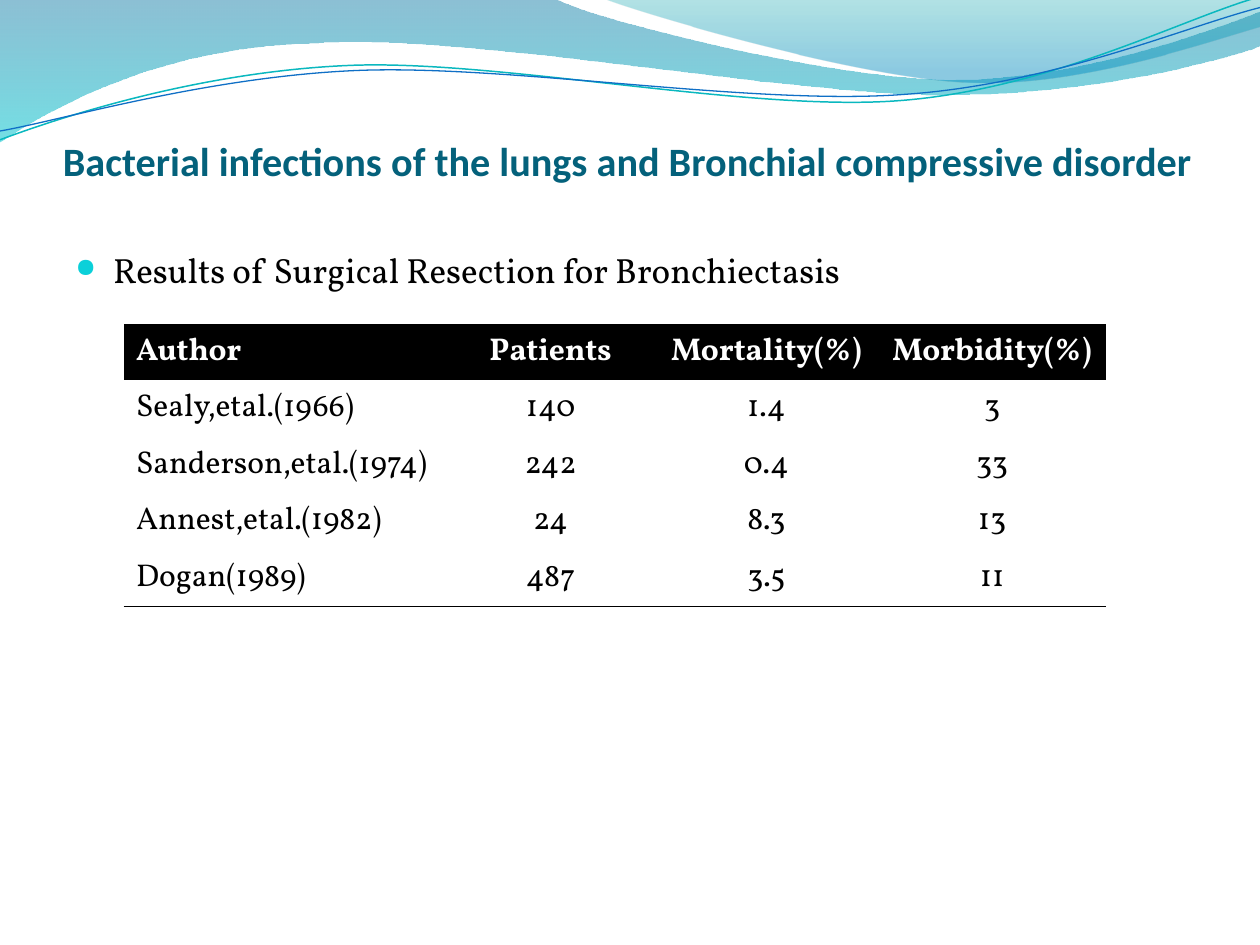
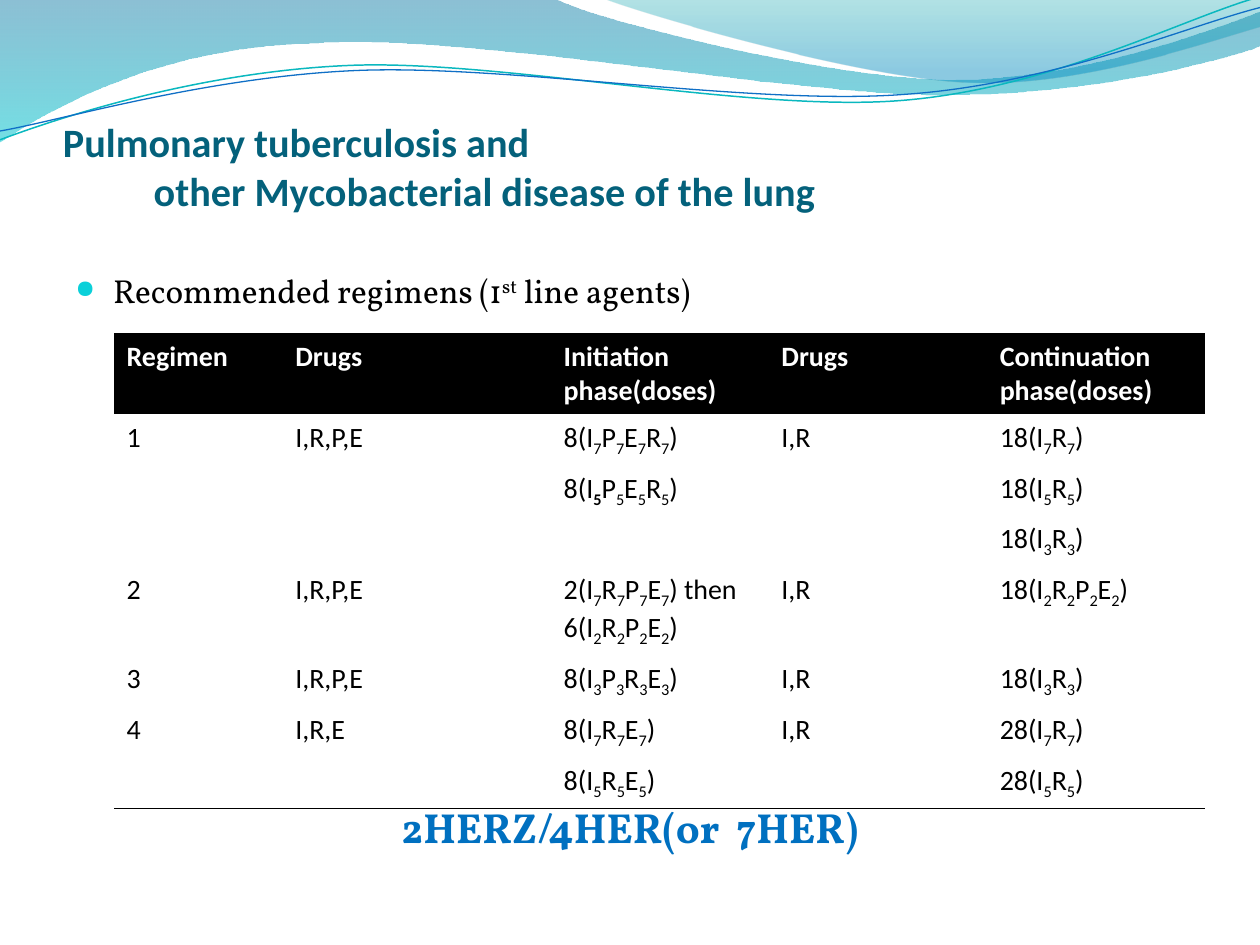
from lxml import etree
from pptx import Presentation, util as u
from pptx.dml.color import RGBColor
from pptx.enum import text
from pptx.oxml.ns import qn

COLORS = {
    "title": "04617B", "body": "000000", "header_text": "FFFFFF", "bullet": "0BD0D9",
    "regimen": "0070C0", "wave_blue": "0074A1", "wave_cyan": "00C6CF",
    "crest_teal": "00A1A9", "crest_blue": "008BBF",
    "line_teal": "0AB8BF", "line_blue": "0F6FC6",
}
HEADING, BODY = "Calibri", "Vollkorn"
NO_STYLE = "{2D5ABB26-0587-4C30-8999-92F81FD0307C}"
CM_PER_INCH = 2.54

# Outlines in inches: a start point, then lines (2 numbers) or Bezier curves (6 numbers).
# Gradient stops are (colour, position, opacity in percent).
BANDS = [
    ([(0, 0), (4.4, -0.01), (4.76, 0.17, 6.64, 0.63, 7.58, 0.63),
      (8.53, 0.63, 9.58, 0.26, 10, 0.09), (10.01, 0.36),
      (9.83, 0.44, 8.7, 0.76, 7.46, 0.75), (6.22, 0.75, 3.82, 0.28, 2.57, 0.34),
      (1.29, 0.36, 0.46, 0.83, -0.01, 1.13), (0, 0)],
     [("wave_blue", 0, 45), ("wave_cyan", 1, 55)]),
    ([(4.79, -0.01), (5.09, 0.11, 6.82, 0.62, 7.69, 0.65),
      (8.56, 0.69, 9.61, 0.32, 10, 0.21), (10, 0), (4.79, -0.01)],
     [("crest_teal", 0, 30), ("crest_blue", 0.8, 45)]),
]
RIPPLES = [
    ([(0, 1.11), (0.48, 0.93, 1.58, 0.57, 2.77, 0.52),
      (3.95, 0.47, 5.93, 0.89, 7.13, 0.8), (8.33, 0.71, 9.38, 0.15, 9.98, -0.02)],
     "line_teal", 0.85),
    ([(0, 1.04), (0.47, 0.96, 1.64, 0.61, 2.83, 0.56),
      (4.03, 0.51, 5.97, 0.84, 7.17, 0.75), (8.36, 0.67, 9.41, 0.21, 10, 0.06)],
     "line_blue", 0.75),
]

# Text between tildes is raised or lowered.
SLIDES = [
    {
        "title": "Bacterial infections of the lungs and Bronchial compressive disorder",
        "title_height": 1.77, "title_hanging": 0,
        "point": "Results of Surgical Resection for Bronchiectasis",
        "point_top": 4.72, "point_height": 11.61, "point_size": 20, "point_spacing": 1.2,
        "table_at": (2.49, 6.53), "table_font": BODY, "table_size": 18,
        "columns": [6.51, 4.2, 4.5, 4.6], "row_heights": [1.14] * 5,
        "number_align": text.PP_ALIGN.CENTER,
        "rows": [
            ["Author", "Patients", "Mortality(%)", "Morbidity(%)"],
            ["Sealy,etal.(1966)", "140", "1.4", "3"],
            ["Sanderson,etal.(1974)", "242", "0.4", "33"],
            ["Annest,etal.(1982)", "24", "8.3", "13"],
            ["Dogan(1989)", "487", "3.5", "11"],
        ],
    },
    {
        "title": "Pulmonary tuberculosis and\vother Mycobacterial disease of the lung",
        "title_height": 2.36, "title_hanging": 1.83,
        "point": "Recommended regimens (1~st~ line agents)",
        "point_top": 4.93, "point_height": 11.2, "point_size": 19, "point_spacing": 1.5,
        "table_at": (2.3, 6.72), "table_font": HEADING, "table_size": 16,
        "columns": [3.4, 5.41, 4.39, 4.4, 4.39],
        "row_heights": [1.63, 0.97, 0.97, 0.97, 1.5, 0.97, 0.97, 0.97],
        "number_align": text.PP_ALIGN.LEFT,
        "rows": [
            ["Regimen", "Drugs", "Initiation phase(doses)", "Drugs",
             "Continuation phase(doses)"],
            ["1", "I,R,P,E", "8(I7P7E7R7)", "I,R", "18(I7R7)"],
            ["", "", "8(I5P5E5R5)", "", "18(I5R5)"],
            ["", "", "", "", "18(I3R3)"],
            ["2", "I,R,P,E", "2(I7R7P7E7) then 6(I2R2P2E2)", "I,R", "18(I2R2P2E2)"],
            ["3", "I,R,P,E", "8(I3P3R3E3)", "I,R", "18(I3R3)"],
            ["4", "I,R,E", "8(I7R7E7)", "I,R", "28(I7R7)"],
            ["", "", "8(I5R5E5)", "", "28(I5R5)"],
        ],
    },
]


def draw_outline(slide, segments, close):
    """Draw a freeform, joining the three points of each curve into one Bezier."""
    numbers = [u.Cm(n * CM_PER_INCH) for segment in segments for n in segment]
    points = list(zip(numbers[::2], numbers[1::2]))
    builder = slide.shapes.build_freeform(*points[0])
    builder.add_line_segments(points[1:], close=close)
    outline = builder.convert_to_shape()
    outline.shadow.inherit = False
    steps = iter(list(outline._element.iter(qn("a:lnTo"))))
    for segment in segments[1:]:
        step = next(steps)
        if len(segment) == 6:
            step.tag = qn("a:cubicBezTo")
            for _ in range(2):
                merged = next(steps)
                step.append(merged[0])
                merged.getparent().remove(merged)
    return outline


def write(paragraph, words, font, size, color, bold=False, baseline=-25000):
    """Write words in one style, shifting the parts between tildes."""
    for number, part in enumerate(words.split("~")):
        if not part:
            continue
        for line_number, line in enumerate(part.split("\v")):
            if line_number:
                paragraph.add_line_break()
            run = paragraph.add_run()
            run.text = line
            run.font.name, run.font.size, run.font.bold = font, u.Pt(size), bold
            run.font.color.rgb = RGBColor.from_string(COLORS[color])
            if number % 2:
                run.font._element.set("baseline", str(baseline))


prs = Presentation()
prs.slide_width, prs.slide_height = u.Cm(25.4), u.Cm(19.05)

for content in SLIDES:
    slide = prs.slides.add_slide(prs.slide_layouts[6])

    # Waves along the top
    for segments, stops in BANDS:
        band = draw_outline(slide, segments, close=True)
        band.line.fill.background()
        band.fill.gradient()
        band.fill.gradient_angle = 270
        for stop, (color, position, _) in zip(band.fill.gradient_stops, stops):
            stop.color.rgb = RGBColor.from_string(COLORS[color])
            stop.position = position
        for tint, (_, _, opacity) in zip(band._element.spPr.iter(qn("a:srgbClr")), stops):
            etree.SubElement(tint, qn("a:alpha"), val=str(opacity * 1000))
    for segments, color, width in RIPPLES:
        ripple = draw_outline(slide, segments, close=False)
        ripple.fill.background()
        ripple.line.color.rgb = RGBColor.from_string(COLORS[color])
        ripple.line.width = u.Pt(width)

    # Title; a second line hangs to the right of the first
    title = slide.shapes.add_textbox(
        u.Cm(1.27), u.Cm(1.96), u.Cm(22.86), u.Cm(content["title_height"])).text_frame
    title.word_wrap = True
    title.vertical_anchor = text.MSO_ANCHOR.BOTTOM
    title.margin_left = title.margin_right = title.margin_bottom = 0
    heading = title.paragraphs[0]
    write(heading, content["title"], HEADING, 23, "title", bold=True)
    if content["title_hanging"]:
        hanging = u.Cm(content["title_hanging"])
        heading._p.get_or_add_pPr().set("marL", str(hanging))
        heading._p.get_or_add_pPr().set("indent", str(-hanging))

    # Bulleted point
    body = slide.shapes.add_textbox(
        u.Cm(1.27), u.Cm(content["point_top"]),
        u.Cm(22.86), u.Cm(content["point_height"])).text_frame
    body.word_wrap = True
    point = body.paragraphs[0]
    point.line_spacing = content["point_spacing"]
    point.space_before = u.Pt(4)
    write(point, content["point"], BODY, content["point_size"], "body", baseline=30000)
    layout = point._p.get_or_add_pPr()
    layout.set("marL", str(u.Cm(0.76)))
    layout.set("indent", str(u.Cm(-0.76)))
    bullet_color = etree.SubElement(layout, qn("a:buClr"))
    etree.SubElement(bullet_color, qn("a:srgbClr"), val=COLORS["bullet"])
    etree.SubElement(layout, qn("a:buSzPct"), val="75000")
    etree.SubElement(layout, qn("a:buChar"), char="●")

    # Table: black header, plain rows, rule below the last row
    rows, columns, heights = content["rows"], content["columns"], content["row_heights"]
    left, top = content["table_at"]
    table = slide.shapes.add_table(
        len(rows), len(columns), u.Cm(left), u.Cm(top),
        u.Cm(sum(columns)), u.Cm(sum(heights))).table
    table.horz_banding = False
    table._tbl.tblPr.find(qn("a:tableStyleId")).text = NO_STYLE
    for column, width in zip(table.columns, columns):
        column.width = u.Cm(width)
    for r, (row, height) in enumerate(zip(rows, heights)):
        table.rows[r].height = u.Cm(height)
        for c, words in enumerate(row):
            for drug in "IRPE":
                for doses in "2357":
                    words = words.replace(drug + doses, f"{drug}~{doses}~")
            cell = table.cell(r, c)
            entry = cell.text_frame.paragraphs[0]
            write(entry, words, content["table_font"], content["table_size"],
                  "body" if r else "header_text", bold=r == 0)
            if c:
                entry.alignment = content["number_align"]
            if r == 0:
                cell.fill.solid()
                cell.fill.fore_color.rgb = RGBColor.from_string(COLORS["body"])
            else:
                cell.fill.background()
            if r == len(rows) - 1:
                rule = etree.Element(qn("a:lnB"), w=str(u.Pt(1)))
                ink = etree.SubElement(rule, qn("a:solidFill"))
                etree.SubElement(ink, qn("a:srgbClr"), val=COLORS["body"])
                cell._tc.get_or_add_tcPr().insert(0, rule)

# Only the regimen slide, the last one, has a bold subscript and a summary
table.cell(2, 2).text_frame.paragraphs[0].runs[1].font.bold = True
summary = slide.shapes.add_textbox(
    u.Cm(6.3), u.Cm(15.52), u.Cm(12.8), u.Cm(1.8)).text_frame
summary.word_wrap = True
regimen = summary.paragraphs[0]
regimen.alignment = text.PP_ALIGN.CENTER
regimen.line_spacing = 1.5
write(regimen, "2HERZ/4HER(or  7HER)", BODY, 24, "regimen", bold=True)

prs.save("out.pptx")
